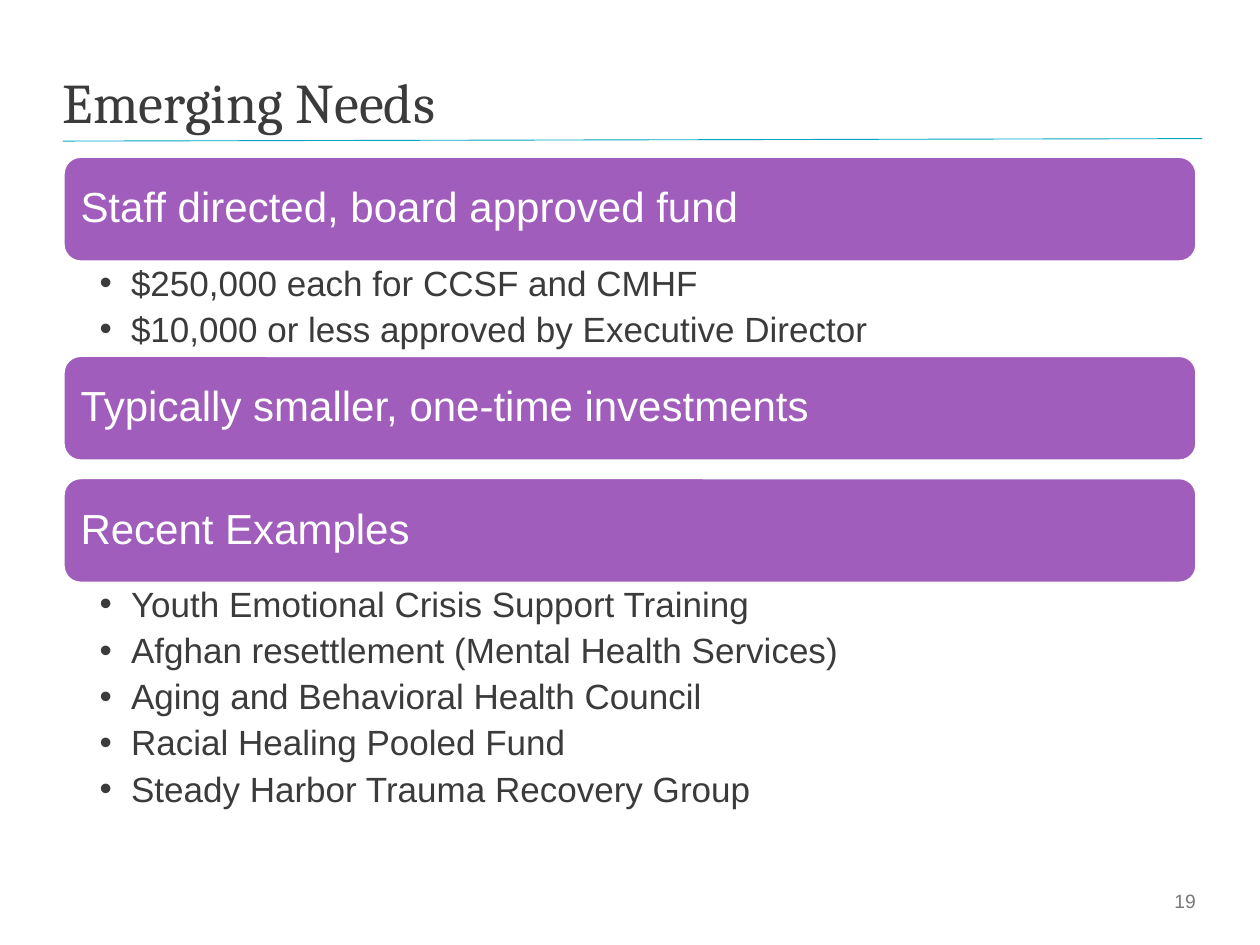
from dataclasses import dataclass

from lxml.etree import SubElement
from pptx import Presentation
from pptx.dml.color import RGBColor
from pptx.enum.shapes import MSO_CONNECTOR, MSO_SHAPE
from pptx.enum.text import MSO_ANCHOR, PP_ALIGN
from pptx.oxml.ns import qn
from pptx.slide import Slide
from pptx.text.text import TextFrame, _Paragraph
from pptx.util import Inches, Pt

COLORS = {
    "text": "3B3B3B",
    "banner": "A05DBB",
    "white": "FFFFFF",
    "rule": "00A5C1",
    "number": "777877",
}
LEFT, WIDTH, BANNER_HEIGHT = 0.5, 9, 0.84


@dataclass
class Section:
    top: float
    heading: str
    bullets: tuple[str, ...] = ()
    bullets_height: float = 0


SECTIONS = [
    Section(
        1.24,
        "Staff directed, board approved fund",
        (
            "$250,000 each for CCSF and CMHF",
            "$10,000 or less approved by Executive Director",
        ),
        0.74,
    ),
    Section(2.82, "Typically smaller, one-time investments"),
    Section(
        3.79,
        "Recent Examples",
        (
            "Youth Emotional Crisis Support Training",
            "Afghan resettlement (Mental Health Services)",
            "Aging and Behavioral Health Council",
            "Racial Healing Pooled Fund",
            "Steady Harbor Trauma Recovery Group",
        ),
        1.76,
    ),
]


def rgb(name: str) -> RGBColor:
    return RGBColor.from_string(COLORS[name])


def style_runs(paragraph: _Paragraph, size: float, color: str, font: str = "Arial") -> None:
    for run in paragraph.runs:
        run.font.name = font
        run.font.size = Pt(size)
        run.font.color.rgb = rgb(color)


def set_frame(frame: TextFrame, anchor: MSO_ANCHOR, left: float, top: float,
              right: float, bottom: float) -> None:
    frame.word_wrap = True
    frame.vertical_anchor = anchor
    frame.margin_left, frame.margin_top = Inches(left), Inches(top)
    frame.margin_right, frame.margin_bottom = Inches(right), Inches(bottom)


def add_text_frame(slide: Slide, left: float, top: float, width: float, height: float) -> TextFrame:
    return slide.shapes.add_textbox(
        Inches(left), Inches(top), Inches(width), Inches(height)).text_frame


def add_title(slide: Slide, text: str) -> None:
    frame = add_text_frame(slide, LEFT, 0.14, WIDTH, 0.93)
    set_frame(frame, MSO_ANCHOR.BOTTOM, 0, 0, 0, 0)
    frame.text = text
    paragraph = frame.paragraphs[0]
    paragraph.line_spacing = Pt(33)
    style_runs(paragraph, 32, "text", "Cambria")


def add_title_rule(slide: Slide) -> None:
    rule = slide.shapes.add_connector(
        MSO_CONNECTOR.STRAIGHT, Inches(LEFT), Inches(1.12), Inches(9.54), Inches(1.1))
    rule.line.color.rgb = rgb("rule")
    rule.line.width = Pt(0.5)
    SubElement(rule._element.spPr, qn("a:effectLst"))


def add_slide_number(slide: Slide, number: int) -> None:
    frame = add_text_frame(slide, 7.26, 6.95, 2.33, 0.4)
    set_frame(frame, MSO_ANCHOR.MIDDLE, 0.1, 0.05, 0.1, 0.05)
    frame.text = str(number)
    paragraph = frame.paragraphs[0]
    paragraph.alignment = PP_ALIGN.RIGHT
    style_runs(paragraph, 11, "number")


def add_banner(slide: Slide, section: Section) -> None:
    shape = slide.shapes.add_shape(
        MSO_SHAPE.ROUNDED_RECTANGLE, Inches(LEFT), Inches(section.top),
        Inches(WIDTH), Inches(BANNER_HEIGHT))
    shape.shadow.inherit = False
    shape.fill.solid()
    shape.fill.fore_color.rgb = rgb("banner")
    shape.line.color.rgb = rgb("white")
    shape.line.width = Pt(2)
    set_frame(shape.text_frame, MSO_ANCHOR.MIDDLE, 0.1, 0.1, 0.1, 0.1)
    shape.text_frame.text = section.heading
    paragraph = shape.text_frame.paragraphs[0]
    paragraph.alignment = PP_ALIGN.LEFT
    paragraph.line_spacing = 0.9
    style_runs(paragraph, 24, "white")


def add_bullets(slide: Slide, section: Section) -> None:
    frame = add_text_frame(
        slide, LEFT, section.top + BANNER_HEIGHT, WIDTH, section.bullets_height)
    set_frame(frame, MSO_ANCHOR.TOP, 0.29, 0.03, 0.16, 0.03)
    frame.text = "\n".join(section.bullets)
    for paragraph in frame.paragraphs:
        properties = paragraph._p.get_or_add_pPr()
        properties.set("marL", str(Inches(0.25)))
        properties.set("indent", str(Inches(-0.25)))
        SubElement(properties, qn("a:buFont"), typeface="Arial")
        SubElement(properties, qn("a:buChar"), char="•")
        paragraph.level = 1
        paragraph.line_spacing = 0.9
        paragraph.space_after = Pt(4.8)
        style_runs(paragraph, 20, "text")


def main() -> None:
    presentation = Presentation()
    presentation.slide_width = Inches(10)
    presentation.slide_height = Inches(7.5)
    slide = presentation.slides.add_slide(presentation.slide_layouts[6])
    add_title_rule(slide)
    add_title(slide, "Emerging Needs")
    add_slide_number(slide, 19)
    for section in SECTIONS:
        add_banner(slide, section)
        if section.bullets:
            add_bullets(slide, section)
    presentation.save("out.pptx")


if __name__ == "__main__":
    main()
